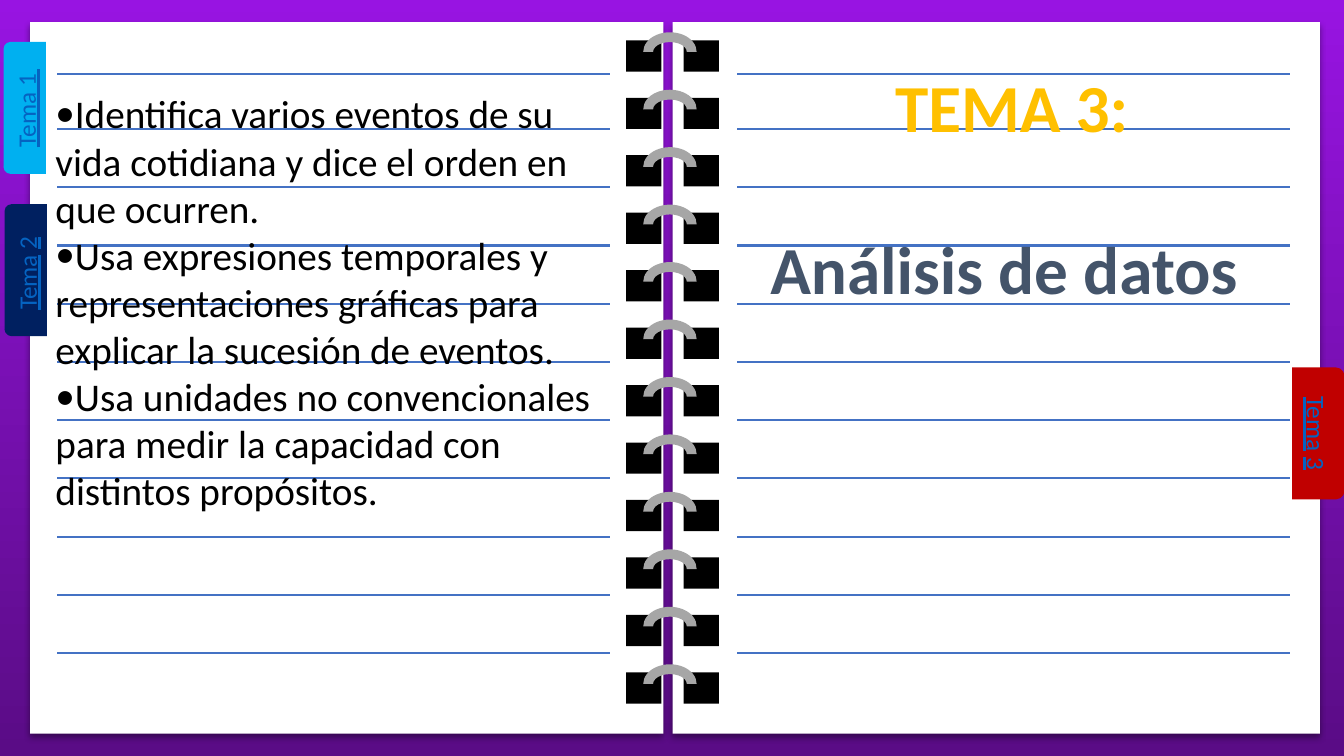
"""Build a notebook slide with ruled pages, a spiral binding and theme tabs."""
import pptx
import pptx.util
import pptx.dml.color
import pptx.enum.shapes
import pptx.enum.text
import pptx.oxml
import pptx.oxml.ns
import lxml.etree

Inches = pptx.util.Inches
Pt = pptx.util.Pt
RGBColor = pptx.dml.color.RGBColor
Shape = pptx.enum.shapes.MSO_SHAPE
Align = pptx.enum.text.PP_ALIGN
Anchor = pptx.enum.text.MSO_ANCHOR
qn = pptx.oxml.ns.qn

VIOLET = RGBColor(0x98, 0x14, 0xE2)
PURPLE = RGBColor(0x5A, 0x0C, 0x86)
WHITE = RGBColor(0xFF, 0xFF, 0xFF)
BLACK = RGBColor(0, 0, 0)
RULE = RGBColor(0x44, 0x72, 0xC4)
GRAY = RGBColor(0xA6, 0xA6, 0xA6)
CYAN = RGBColor(0x00, 0xB0, 0xF0)
NAVY = RGBColor(0x00, 0x20, 0x60)
RED = RGBColor(0xC0, 0x00, 0x00)
LINK = RGBColor(0x05, 0x63, 0xC1)
GOLD = RGBColor(0xFF, 0xC0, 0x00)
SLATE = RGBColor(0x44, 0x54, 0x6A)

SHADOW = (
    '<a:outerShdw xmlns:a="http://schemas.openxmlformats.org/drawingml/2006/main" '
    'blurRad="50800" dist="38100" dir="5400000" algn="t" rotWithShape="0">'
    '<a:srgbClr val="000000"><a:alpha val="40000"/></a:srgbClr></a:outerShdw>'
)

deck = pptx.Presentation()
deck.slide_width = Inches(13.33)
deck.slide_height = Inches(7.5)
slide = deck.slides.add_slide(deck.slide_layouts[1])
shapes = slide.shapes


def add_block(kind, left, top, width, height, color):
    block = shapes.add_shape(kind, Inches(left), Inches(top), Inches(width), Inches(height))
    block.shadow.inherit = False
    block.fill.solid()
    block.fill.fore_color.rgb = color
    block.line.fill.background()
    return block


def style_run(run, size, color, bold=False):
    run.font.name = "Calibri"
    run.font.size = Pt(size)
    run.font.color.rgb = color
    run.font.bold = bold


back = add_block(Shape.RECTANGLE, 0, -0.04, 13.33, 7.54, PURPLE)
back.fill.gradient()
back.fill.gradient_angle = 270
for stop, color, place in zip(back.fill.gradient_stops, (VIOLET, PURPLE), (0, 1)):
    stop.color.rgb = color
    stop.position = place

rules = [0.73] + [1.28 + 5.2 * row / 9 for row in range(10)]
for left, width, start in ((6.67, 6.42, 7.31), (0.3, 6.28, 0.57)):
    page = add_block(Shape.RECTANGLE, left, 0.22, width, 7.06, WHITE)
    page.element.spPr.find(qn("a:effectLst")).append(pptx.oxml.parse_xml(SHADOW))
    for top in rules:
        rule = shapes.add_connector(
            pptx.enum.shapes.MSO_CONNECTOR.STRAIGHT,
            Inches(start), Inches(top), Inches(start + 5.48), Inches(top))
        rule.line.color.rgb = RULE
        rule.line.width = Pt(1.5)
        lxml.etree.SubElement(rule.element.spPr, qn("a:effectLst"))

for ring in range(12):
    top = 0.32 + 0.57 * ring
    for left in (6.78, 6.21):
        add_block(Shape.RECTANGLE, left, top + 0.08, 0.35, 0.31, BLACK)
    add_block(Shape.BLOCK_ARC, left + 0.17, top, 0.53, 0.39, GRAY)

tabs = (
    (-0.41, 0.86, 0.42, 270, CYAN, ("Tema 1 ",)),
    (-0.4, 2.47, 0.42, 270, NAVY, ("Tema", " ", "2", " ")),
    (12.42, 4.04, 0.52, 90, RED, ("Tema", " ", "3")),
)
for left, top, height, turn, color, words in tabs:
    tab = add_block(Shape.ROUND_2_SAME_RECTANGLE, left, top, 1.31, height, color)
    tab.rotation = turn
    tab.text_frame.vertical_anchor = Anchor.MIDDLE
    label = tab.text_frame.paragraphs[0]
    label.alignment = Align.CENTER
    for word in words:
        run = label.add_run()
        run.text = word
        blank = word == " "
        style_run(run, 18, WHITE if blank else LINK)
        run.font.underline = not blank

title = shapes.title
body = slide.placeholders[1]
frames = ((title, 7.31, 0.6, 5.45, 3.33), (body, 0.45, 0.84, 5.53, 4.34))
for holder, left, top, width, height in frames:
    holder.left, holder.top = Inches(left), Inches(top)
    holder.width, holder.height = Inches(width), Inches(height)
    frame = holder.text_frame
    frame.word_wrap = True
    frame.auto_size = pptx.enum.text.MSO_AUTO_SIZE.NONE
    frame.vertical_anchor = Anchor.TOP
    shapes.element.append(holder.element)

title.text_frame.text = "TEMA 3:\nAnálisis de datos "
for para, color, gap in zip(title.text_frame.paragraphs, (GOLD, SLATE), (0, 58)):
    para.alignment = Align.CENTER
    para.space_before = Pt(gap)
    style_run(para.runs[0], 48, color, True)

body.text_frame.text = "\n".join((
    "Identifica varios eventos de su vida cotidiana y dice el orden en que ocurren.",
    "Usa expresiones temporales y representaciones gráficas para explicar la sucesión de eventos.",
    "Usa unidades no convencionales para medir la capacidad con distintos propósitos.",
))
for para in body.text_frame.paragraphs:
    para.alignment = Align.LEFT
    para.space_before = Pt(0)
    style_run(para.runs[0], 28, BLACK)
    props = para._p.get_or_add_pPr()
    props.set("marL", "0")
    props.set("indent", "0")
    lxml.etree.SubElement(props, qn("a:buFont")).set("typeface", "Calibri")
    lxml.etree.SubElement(props, qn("a:buChar")).set("char", "•")

deck.save("out.pptx")
